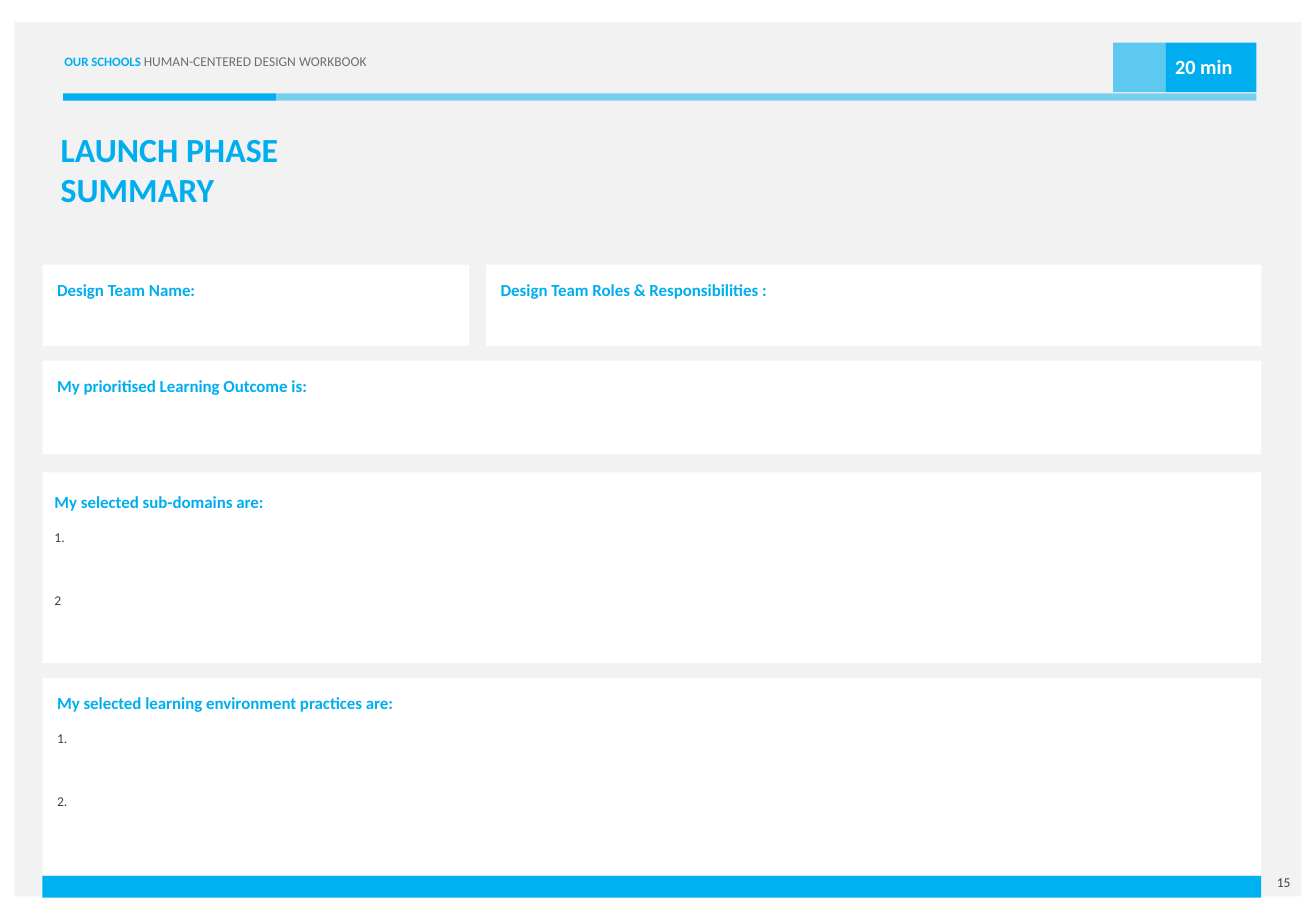
from lxml.etree import SubElement
from pptx import Presentation
from pptx.dml.color import RGBColor
from pptx.enum.shapes import MSO_SHAPE as SHAPE
from pptx.enum.text import MSO_ANCHOR as ANCHOR, PP_ALIGN as ALIGN
from pptx.oxml.ns import qn
from pptx.util import Inches, Pt

FONT = "Calibri"
COLORS = {
    "page": "F2F2F2", "white": "FFFFFF", "cyan": "00AEEF", "bar": "00B0F0",
    "header": "6D6E71", "number": "404040", "item": "3F3F3F",
}
LEFT, WIDTH = 0.35, 10.03

# Rectangles: left, top, width, height, colour, opacity in percent
PANELS = [
    (0.12, 0.18, 10.59, 7.2, "page", 100),
    (0.52, 0.77, 1.75, 0.06, "bar", 100),
    (2.27, 0.77, 8.07, 0.06, "bar", 50),
    (9.16, 0.35, 0.43, 0.41, "cyan", 61),
    (9.59, 0.35, 0.75, 0.41, "cyan", 100),
    (LEFT, 7.21, WIDTH, 0.18, "bar", 100),
]
# Answer boxes: left, top, width, height, left and top inset, heading, items
ANSWERS = [
    (LEFT, 2.18, 3.51, 0.67, 0.12, 0.12, "Design Team Name:", []),
    (4, 2.18, 6.38, 0.67, 0.12, 0.12, "Design Team Roles & Responsibilities :", []),
    (LEFT, 2.97, WIDTH, 0.77, 0.12, 0.12, "My prioritised Learning Outcome is:", []),
    (LEFT, 3.89, WIDTH, 1.57, 0.1, 0.16, "My selected sub-domains are:", ["1.", "2"]),
    (LEFT, 5.58, WIDTH, 1.62, 0.12, 0.12,
     "My selected learning environment practices are:", ["1.", "2."]),
]
ITEM_GAPS = [10, 28]  # points above the first and the second item


def rgb(name):
    return RGBColor.from_string(COLORS[name])


def add_panel(slide, x, y, w, h, color, opacity=100):
    sp = slide.shapes.add_shape(SHAPE.RECTANGLE, *map(Inches, (x, y, w, h)))
    sp.shadow.inherit = False
    sp.fill.solid()
    sp.fill.fore_color.rgb = rgb(color)
    sp.line.fill.background()
    if opacity < 100:
        clr = sp.fill._xPr.find(qn("a:solidFill"))[0]
        SubElement(clr, qn("a:alpha"), val=str(opacity * 1000))
    return sp


def add_text(slide, x, y, w, h, paragraphs, inset=(0, 0), align=ALIGN.LEFT,
             anchor=ANCHOR.TOP):
    """Each paragraph is (space before, runs); each run is (text, size, colour, bold)."""
    tf = slide.shapes.add_textbox(*map(Inches, (x, y, w, h))).text_frame
    tf.word_wrap = True
    tf.vertical_anchor = anchor
    tf.margin_left, tf.margin_top = map(Inches, inset)
    tf.margin_right = Inches(0.1 if align == ALIGN.RIGHT else 0)
    tf.margin_bottom = 0
    for i, (gap, runs) in enumerate(paragraphs):
        p = tf.add_paragraph() if i else tf.paragraphs[0]
        p.alignment = align
        p.space_before = Pt(gap)
        for text, size, color, bold in runs:
            r = p.add_run()
            r.text = text
            r.font.name, r.font.size, r.font.bold = FONT, Pt(size), bold
            r.font.color.rgb = rgb(color)


def main():
    prs = Presentation()
    prs.slide_width, prs.slide_height = Inches(10.83), Inches(7.5)
    slide = prs.slides.add_slide(prs.slide_layouts[6])

    for panel in PANELS:
        add_panel(slide, *panel)

    add_text(slide, 0.51, 0.42, 3.03, 0.15, [(0, [
        ("OUR SCHOOLS ", 7.6, "cyan", True),
        ("HUMAN-CENTERED DESIGN WORKBOOK", 8, "header", False)])], inset=(0.02, 0.02))
    add_text(slide, 9.59, 0.35, 0.75, 0.41,
             [(0, [("20 min", 12, "white", True)])], inset=(0.08, 0.1))
    add_text(slide, 0.5, 1.06, 2.07, 0.67,
             [(0, [("LAUNCH PHASE SUMMARY", 20, "cyan", True)])])

    for x, y, w, h, dx, dy, heading, items in ANSWERS:
        add_panel(slide, x, y, w, h, "white")
        lines = [(0, [(heading, 10, "cyan", True)])]
        lines += [(gap, [(item, 8, "item", False)]) for gap, item in zip(ITEM_GAPS, items)]
        add_text(slide, x, y, w, h, lines, inset=(dx, dy))

    add_text(slide, 10.31, 7.14, 0.41, 0.25, [(0, [("15", 8, "number", False)])],
             align=ALIGN.RIGHT, anchor=ANCHOR.MIDDLE)
    prs.save("out.pptx")


if __name__ == "__main__":
    main()
